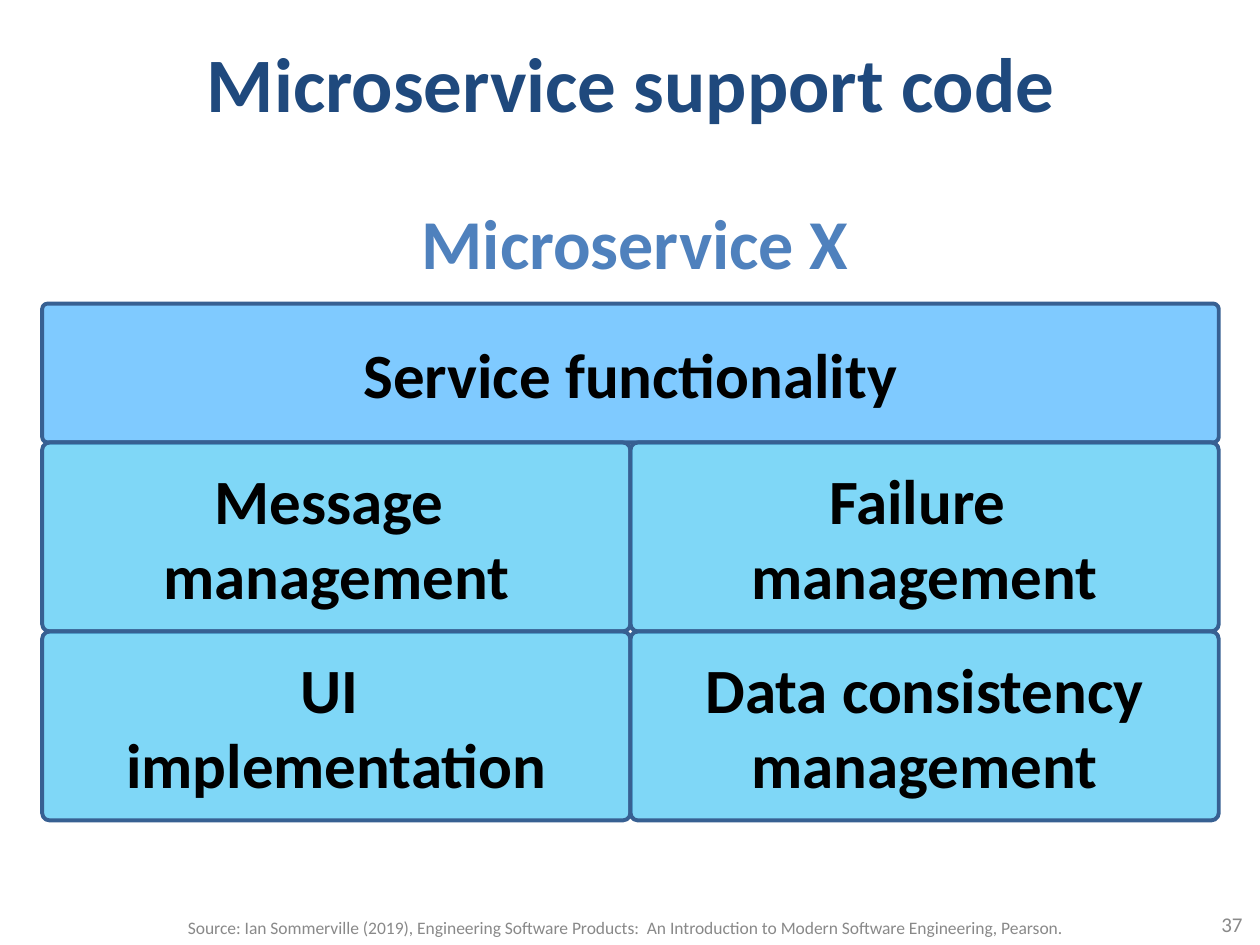
from lxml import etree
from pptx import Presentation
from pptx.dml.color import RGBColor
from pptx.enum.shapes import MSO_SHAPE
from pptx.enum.text import MSO_ANCHOR, PP_ALIGN
from pptx.oxml.ns import qn
from pptx.util import Cm, Pt

ROUND = MSO_SHAPE.ROUNDED_RECTANGLE
TOP, MIDDLE = MSO_ANCHOR.TOP, MSO_ANCHOR.MIDDLE
CENTER, RIGHT = PP_ALIGN.CENTER, PP_ALIGN.RIGHT


def color(code):
    return RGBColor.from_string(code)


class Deck:
    face = "Calibri"
    edge = "376092"
    ink = "000000"
    gray = "898989"

    def __init__(self):
        self.prs = Presentation()
        self.prs.slide_width, self.prs.slide_height = Cm(25.4), Cm(19.05)
        self.slide = self.prs.slides.add_slide(self.prs.slide_layouts[5])

    def letter(self, shape, text, size, code, bold=False, align=CENTER, anchor=MIDDLE):
        frame = shape.text_frame
        frame.text = text
        frame.vertical_anchor = anchor
        para = frame.paragraphs[0]
        para.alignment = align
        font = para.font
        font.name, font.size, font.bold = self.face, Pt(size), bold
        font.color.rgb = color(code)

    def title(self, text, x, y, w, h):
        shape = self.slide.shapes.title
        shape.left, shape.top, shape.width, shape.height = Cm(x), Cm(y), Cm(w), Cm(h)
        self.letter(shape, text, 44, "1F497D", True)

    def label(self, text, x, y, w, h, size, code, **style):
        shape = self.slide.shapes.add_textbox(Cm(x), Cm(y), Cm(w), Cm(h))
        shape.text_frame.word_wrap = True
        self.letter(shape, text, size, code, **style)

    def block(self, text, x, y, w, h, fill):
        shape = self.slide.shapes.add_shape(ROUND, Cm(x), Cm(y), Cm(w), Cm(h))
        shape.shadow.inherit = False
        shape.adjustments[0] = 0.04
        shape.fill.solid()
        shape.fill.fore_color.rgb = color(fill)
        tint = shape.element.spPr.find(qn("a:solidFill"))[0]
        etree.SubElement(tint, qn("a:alpha"), val="50000")
        shape.line.color.rgb = color(self.edge)
        shape.line.width = Pt(2.25)
        frame = shape.text_frame
        frame.margin_left = frame.margin_right = 0
        frame.margin_top = frame.margin_bottom = 0
        frame.word_wrap = False
        self.letter(shape, text, 36, self.ink, True)


def main():
    deck = Deck()
    deck.title("Microservice support code", 1.3, 0.33, 22.86, 2.64)
    deck.label("Microservice X", 7.47, 3.89, 10.67, 1.96, 40, "4F81BD",
               bold=True, anchor=TOP)

    left, top, wide, high, head = 0.85, 8.92, 11.86, 3.81, 2.8
    deck.block("Service functionality", left, top - head, 2 * wide, head, "0096FF")
    grid = [
        ["Message \vmanagement", "Failure \vmanagement"],
        ["UI \vimplementation", "Data consistency\vmanagement"],
    ]
    for row, names in enumerate(grid):
        for col, name in enumerate(names):
            deck.block(name, left + col * wide, top + row * high, wide, high, "00B0F0")

    deck.label("Source: Ian Sommerville (2019), Engineering Software Products:  "
               "An Introduction to Modern Software Engineering, Pearson.",
               1.7, 18.34, 21.8, 0.71, 10, deck.gray)
    deck.label("37", 19.38, 18.11, 5.92, 1.02, 12, deck.gray, align=RIGHT)
    deck.prs.save("out.pptx")


if __name__ == "__main__":
    main()
